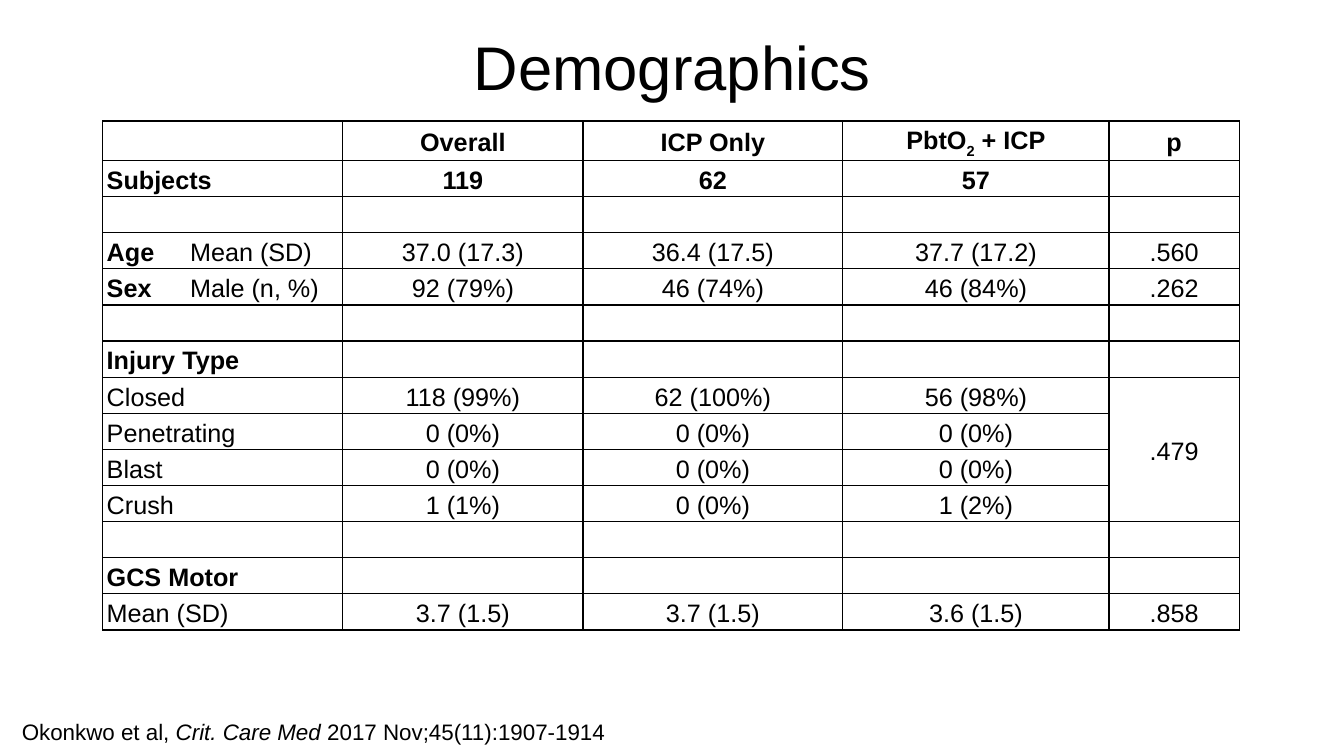
from lxml import etree
from pptx import Presentation
from pptx import util as u
from pptx.dml.color import RGBColor
from pptx.enum import text
from pptx.oxml import ns

COLORS = {"ink": "000000", "paper": "FFFFFF"}
COLUMN_WIDTHS = [6.05, 6.05, 6.55, 6.71, 3.28]
HEADER_HEIGHT, ROW_HEIGHT = 0.99, 0.91
P_COLUMN = len(COLUMN_WIDTHS) - 1
INJURY_ROWS = (7, 10)
BOLD, ITALIC = {"bold": True}, {"italic": True}

DEMOGRAPHICS = [
    ["", "Overall", "ICP Only", [("PbtO", {}), ("2", {"baseline": "-25000"}), (" + ICP", {})], "p"],
    ["Subjects", "119", "62", "57", ""],
    [""] * 5,
    [[("Age\t", BOLD), ("Mean (SD)", {})], "37.0 (17.3)", "36.4 (17.5)", "37.7 (17.2)", ".560"],
    [[("Sex\t", BOLD), ("Male (n, %)", {})], "92 (79%)", "46 (74%)", "46 (84%)", ".262"],
    [""] * 5,
    ["Injury Type", "", "", "", ""],
    ["Closed", "118 (99%)", "62 (100%)", "56 (98%)", ".479"],
    ["Penetrating", "0 (0%)", "0 (0%)", "0 (0%)", ""],
    ["Blast", "0 (0%)", "0 (0%)", "0 (0%)", ""],
    ["Crush", "1 (1%)", "0 (0%)", "1 (2%)", ""],
    [""] * 5,
    ["GCS Motor", "", "", "", ""],
    ["Mean (SD)", "3.7 (1.5)", "3.7 (1.5)", "3.6 (1.5)", ".858"],
]
BOLD_ROWS = {0, 1, 6, 12}


def set_attributes(target, values):
    for name, value in values.items():
        setattr(target, name, value)


class SlideBuilder:
    font_name = "Arial"

    def __init__(self, presentation):
        self.slide = presentation.slides.add_slide(presentation.slide_layouts[5])
        fill = self.slide.background.fill
        fill.solid()
        fill.fore_color.rgb = RGBColor.from_string(COLORS["paper"])

    def add_runs(self, paragraph, content, size, **base):
        runs = [(content, {})] if isinstance(content, str) else content
        for words, extra in runs:
            if not words:
                continue
            run = paragraph.add_run()
            run.text = words
            values = {"name": self.font_name, "size": u.Pt(size), **base, **extra}
            baseline = values.pop("baseline", None)
            set_attributes(run.font, values)
            run.font.color.rgb = RGBColor.from_string(COLORS["ink"])
            if baseline:
                run.font._element.set("baseline", baseline)

    def title(self, words, box):
        shape = self.slide.shapes.title
        set_attributes(shape, dict(zip(("left", "top", "width", "height"), map(u.Cm, box))))
        shape.text_frame.vertical_anchor = text.MSO_ANCHOR.MIDDLE
        paragraph = shape.text_frame.paragraphs[0]
        set_attributes(paragraph, {"alignment": text.PP_ALIGN.CENTER, "line_spacing": 0.9})
        self.add_runs(paragraph, words, 44)

    def citation(self, content, box):
        frame = self.slide.shapes.add_textbox(*map(u.Cm, box)).text_frame
        frame.word_wrap = True
        self.add_runs(frame.paragraphs[0], content, 16)

    def border(self, cell):
        properties = cell._tc.get_or_add_tcPr()
        for index, side in enumerate(("lnL", "lnR", "lnT", "lnB")):
            line = etree.Element(ns.qn(f"a:{side}"), w=str(u.Pt(1)))
            fill = etree.SubElement(line, ns.qn("a:solidFill"))
            etree.SubElement(fill, ns.qn("a:srgbClr"), val=COLORS["ink"])
            properties.insert(index, line)

    def tab_stop(self, paragraph, position):
        tabs = etree.SubElement(paragraph._p.get_or_add_pPr(), ns.qn("a:tabLst"))
        etree.SubElement(tabs, ns.qn("a:tab"), pos=str(u.Cm(position)), algn="l")

    def cell(self, cell, content, row, column):
        side, edge = (0.08, 0) if column == P_COLUMN else (0.1, 0.03)
        set_attributes(cell, {
            "margin_left": u.Cm(side), "margin_right": u.Cm(side),
            "margin_top": u.Cm(edge), "margin_bottom": u.Cm(edge),
            "vertical_anchor": text.MSO_ANCHOR.MIDDLE,
        })
        cell.fill.background()
        self.border(cell)
        paragraph = cell.text_frame.paragraphs[0]
        if column == 0 and not isinstance(content, str):
            self.tab_stop(paragraph, 2.1)
        alignment = text.PP_ALIGN.CENTER if column else text.PP_ALIGN.LEFT
        set_attributes(paragraph, {"alignment": alignment, "line_spacing": 1.15})
        self.add_runs(paragraph, content, 18, bold=row in BOLD_ROWS)

    def table(self, rows, left, top):
        height = HEADER_HEIGHT + ROW_HEIGHT * (len(rows) - 1)
        table = self.slide.shapes.add_table(
            len(rows), len(COLUMN_WIDTHS), u.Cm(left), u.Cm(top),
            u.Cm(sum(COLUMN_WIDTHS)), u.Cm(height)).table
        set_attributes(table, {"first_row": False, "horz_banding": False})
        for column, width in zip(table.columns, COLUMN_WIDTHS):
            column.width = u.Cm(width)
        for row, contents in enumerate(rows):
            table.rows[row].height = u.Cm(ROW_HEIGHT if row else HEADER_HEIGHT)
            for column, content in enumerate(contents):
                self.cell(table.cell(row, column), content, row, column)
        first, last = INJURY_ROWS
        table.cell(first, P_COLUMN).merge(table.cell(last, P_COLUMN))


def main():
    presentation = Presentation()
    set_attributes(presentation, {"slide_width": u.Cm(33.87), "slide_height": u.Cm(19.05)})
    builder = SlideBuilder(presentation)
    builder.table(DEMOGRAPHICS, 2.59, 3.05)
    builder.title("Demographics", (6.15, 0.18, 21.59, 3.18))
    builder.citation(
        [("Okonkwo et al, ", {}), ("Crit. Care Med", ITALIC), (" 2017 Nov;45(11):1907-1914", {})],
        (0.3, 17.98, 17.07, 0.94))
    presentation.save("out.pptx")


if __name__ == "__main__":
    main()
